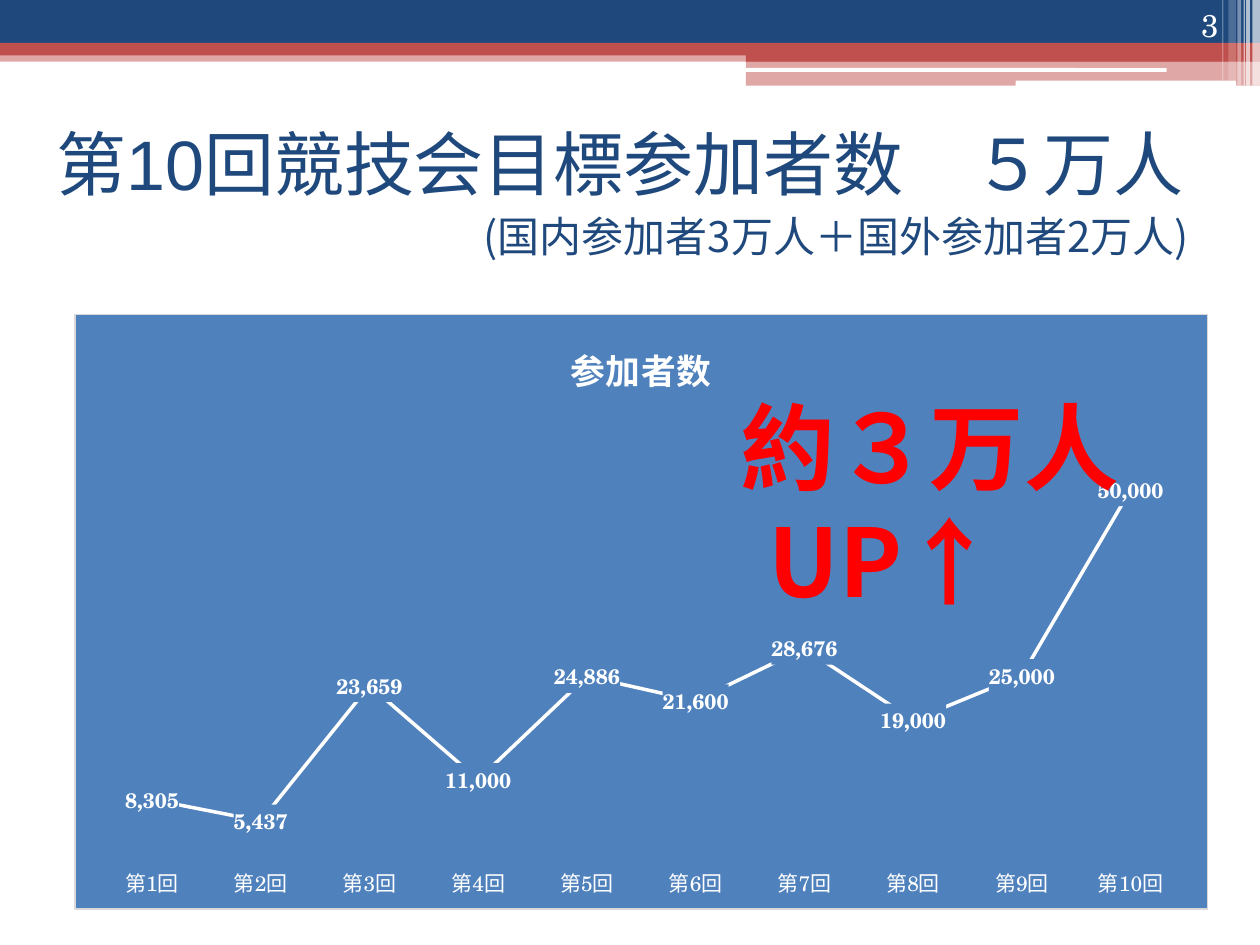
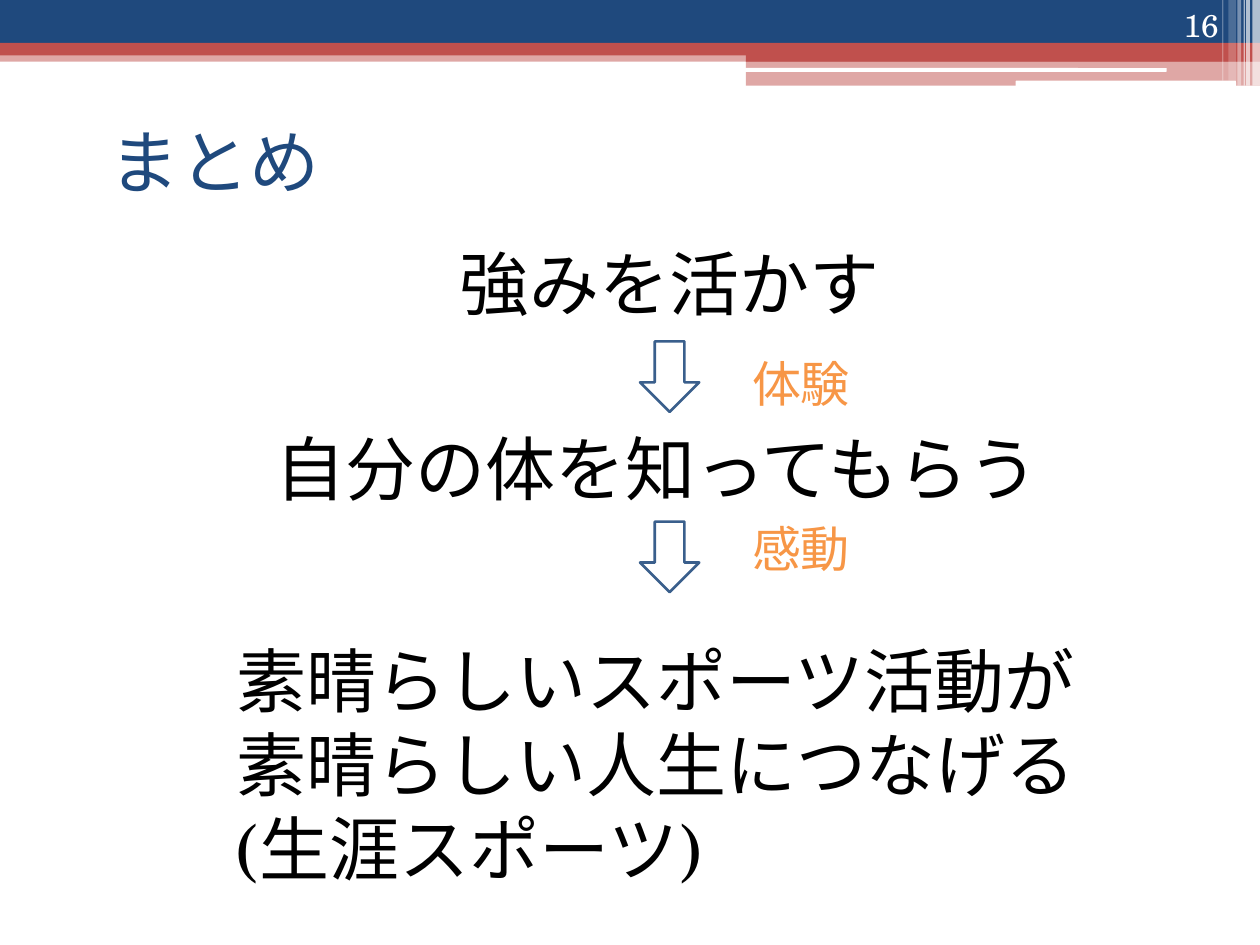
import pptx
import pptx.chart.data
import pptx.dml.color
import pptx.enum.chart
import pptx.enum.shapes
import pptx.enum.text
import pptx.oxml
import pptx.oxml.ns
import pptx.util

NAVY, RED, WHITE, BLACK = "1F497D", "C0504D", "FFFFFF", "000000"
BLUE, ARROW_EDGE, ORANGE = "4F81BD", "3A5F8C", "F79646"
SERIF, SANS = "TeX Gyre Schola", "Noto Sans CJK JP"
SHAPES = pptx.enum.shapes.MSO_SHAPE
ALIGN = pptx.enum.text.PP_ALIGN
ANCHOR = pptx.enum.text.MSO_ANCHOR
COLUMNS, ROWS = 100, 75

BANDS = [
    (0, 4, 100, 0.9, RED, 50),
    (0, 0, 100, 3.4, NAVY, 100),
    (0, 3.4, 100, 1, RED, 100),
    (59.2, 3.9, 40.8, 1, RED, 100),
    (59.2, 4.8, 40.8, 2, RED, 50),
]
GROOVES = [(59.1, 5.4, 33.5, 0.3), (80.6, 6.4, 17.5, 0.45)]
STRIPES = [
    (99.4, 0.6, 6.8, 65),
    (98.9, 0.3, 6.8, 65),
    (98.7, 0.1, 6.8, 60),
    (98.2, 0.3, 6.8, 40),
    (97.5, 0.6, 6.4, 20),
    (97, 0.1, 6.4, 30),
]
VISITORS = [8305, 5437, 23659, 11000, 24886, 21600, 28676, 19000, 25000, 50000]


def color(value):
    return pptx.dml.color.RGBColor.from_string(value)


def chart_xml(body):
    return pptx.oxml.parse_xml(
        body.replace(
            ">",
            ' xmlns:c="http://schemas.openxmlformats.org/drawingml/2006/chart"'
            ' xmlns:a="http://schemas.openxmlformats.org/drawingml/2006/main">',
            1,
        )
    )


def chart_fill(fill, line=""):
    return chart_xml(
        f'<c:spPr><a:solidFill><a:srgbClr val="{fill}"/></a:solidFill>{line}</c:spPr>'
    )


class Painter:
    def __init__(self):
        self.deck = pptx.Presentation()
        self.deck.slide_width = pptx.util.Inches(10)
        self.deck.slide_height = pptx.util.Inches(7.5)
        self.page = None

    def grid(self, left, top, width, height):
        column = self.deck.slide_width / COLUMNS
        row = self.deck.slide_height / ROWS
        return [
            pptx.util.Emu(round(length))
            for length in (left * column, top * row, width * column, height * row)
        ]

    def new_page(self, number):
        self.page = self.deck.slides.add_slide(self.deck.slide_layouts[6])
        for *place, fill, opacity in BANDS:
            self.shape(place, fill, opacity=opacity)
        for place in GROOVES:
            self.shape(place, WHITE, SHAPES.ROUNDED_RECTANGLE)
        for left, width, height, opacity in STRIPES:
            self.shape((left, 0, width, height), WHITE, opacity=opacity)
        self.text((89.4, 0, 8.3, 4), number, 18, WHITE,
                  align=ALIGN.RIGHT, anchor=ANCHOR.BOTTOM)

    def shape(self, place, fill, kind=SHAPES.RECTANGLE, opacity=100, edge=None):
        shape = self.page.shapes.add_shape(kind, *self.grid(*place))
        shape.shadow.inherit = False
        shape.fill.solid()
        shape.fill.fore_color.rgb = color(fill)
        if opacity < 100:
            tint = next(shape.element.iter(pptx.oxml.ns.qn("a:srgbClr")))
            alpha = tint.makeelement(pptx.oxml.ns.qn("a:alpha"), {"val": str(opacity * 1000)})
            tint.append(alpha)
        if edge:
            shape.line.color.rgb = color(edge)
            shape.line.width = pptx.util.Pt(1.5)
        else:
            shape.line.fill.background()

    def text(self, place, words, size, ink, font=SERIF, align=ALIGN.LEFT,
             anchor=ANCHOR.TOP, bold=False, inset=0.5, indent=0):
        box = self.page.shapes.add_textbox(*self.grid(*place))
        frame = box.text_frame
        frame.word_wrap = True
        frame.vertical_anchor = anchor
        frame.margin_top = self.grid(0, inset, 0, 0)[1]
        frame.text = words
        for para in frame.paragraphs:
            para.alignment = align
            if indent:
                first_line = self.grid(indent, 0, 0, 0)[0]
                para._p.get_or_add_pPr().set("indent", str(first_line))
            for span in para.runs:
                span.font.size = pptx.util.Pt(size)
                span.font.bold = bold
                span.font.name = font
                span.font.color.rgb = color(ink)
                latin = span.font._element.find(pptx.oxml.ns.qn("a:latin"))
                latin.addnext(latin.makeelement(pptx.oxml.ns.qn("a:ea"), {"typeface": SANS}))

    def chart_font(self, font, size, ink, bold=False):
        font.name = SERIF
        font.size = pptx.util.Pt(size)
        font.bold = bold
        font.color.rgb = color(ink)

    def line_chart(self, place, name, categories, values):
        data = pptx.chart.data.CategoryChartData(number_format="#,##0")
        data.categories = categories
        data.add_series(name, values)
        chart = self.page.shapes.add_chart(
            pptx.enum.chart.XL_CHART_TYPE.LINE, *self.grid(*place), data).chart
        self.chart_font(chart.font, 10, BLACK)
        chart.has_legend = False
        chart.has_title = True
        chart.chart_title.include_in_layout = False
        heading = chart.chart_title.text_frame
        heading.text = name
        self.chart_font(heading.paragraphs[0].runs[0].font, 19.9, WHITE, True)

        category_axis = chart.category_axis
        category_axis.major_tick_mark = pptx.enum.chart.XL_TICK_MARK.NONE
        category_axis.format.line.fill.background()
        self.chart_font(category_axis.tick_labels.font, 12, WHITE)
        value_axis = chart.value_axis
        value_axis.minimum_scale = 0
        value_axis.maximum_scale = 60000
        value_axis.has_major_gridlines = False
        value_axis.visible = False

        plot = chart.plots[0]
        plot.vary_by_categories = False
        series = plot.series[0]
        series.smooth = False
        series.marker.style = pptx.enum.chart.XL_MARKER_STYLE.NONE
        series.format.line.color.rgb = color(WHITE)
        series.format.line.width = pptx.util.Pt(2)
        labels = series.data_labels
        labels.show_value = True
        labels.number_format = "#,##0"
        labels.number_format_is_linked = False
        labels.position = pptx.enum.chart.XL_LABEL_POSITION.CENTER
        self.chart_font(labels.font, 12, WHITE, True)

        text_tag = pptx.oxml.ns.qn("c:txPr")
        labels._element.find(text_tag).addprevious(chart_fill(BLUE))
        border = '<a:ln w="9525"><a:solidFill><a:srgbClr val="D9D9D9"/></a:solidFill></a:ln>'
        chart.element.find(text_tag).addprevious(chart_fill(BLUE, border))
        area = next(chart.element.iter(pptx.oxml.ns.qn("c:plotArea")))
        for layout in area.findall(pptx.oxml.ns.qn("c:layout")):
            area.remove(layout)
        shares = {"x": 0.02, "y": 0.17, "w": 0.96, "h": 0.75}
        area.insert(0, chart_xml(
            '<c:layout><c:manualLayout><c:layoutTarget val="inner"/>'
            '<c:xMode val="edge"/><c:yMode val="edge"/>'
            + "".join(f'<c:{side} val="{share}"/>' for side, share in shares.items())
            + "</c:manualLayout></c:layout>"))


def target_page(painter):
    painter.new_page("3")
    painter.text((3.5, 7.6, 104.7, 17.3), "第10回競技会目標参加者数　５万人",
                 40, NAVY, "Arial", inset=2)
    painter.line_chart((5.9, 24.9, 90, 47.3), "参加者数",
                       [f"第{turn}回" for turn in range(1, len(VISITORS) + 1)], VISITORS)
    painter.text((42.9, 30.4, 54.3, 10.1), "約３万人UP↑", 54, "FF0000", SANS,
                 ALIGN.CENTER, bold=True, indent=7.5)
    painter.text((37.4, 16.2, 61.8, 5), "(国内参加者3万人＋国外参加者2万人)", 24, NAVY, SANS)


def summary_page(painter):
    painter.new_page("16")
    painter.text((7.7, 6.9, 24.8, 11.7), "まとめ", 40, NAVY, "Karla", anchor=ANCHOR.MIDDLE)
    painter.text((24.8, 18.6, 56.7, 7.7), "強みを活かす", 40, BLACK, align=ALIGN.CENTER)
    painter.text((20.1, 33.3, 64.1, 7.7), "自分の体を知ってもらう", 40, BLACK, align=ALIGN.CENTER)
    for arrow_top, label_top, label in ((27.1, 27.6, "体験"), (41.4, 40.7, "感動")):
        painter.shape((50.8, arrow_top, 4.7, 5.6), WHITE, SHAPES.DOWN_ARROW, edge=ARROW_EDGE)
        painter.text((58.7, label_top, 12.2, 5.7), label, 28, ORANGE)
    painter.text((17.8, 50.1, 79.9, 21.2),
                 "素晴らしいスポーツ活動が\n素晴らしい人生につなげる\n(生涯スポーツ)", 40, BLACK)


def main():
    painter = Painter()
    target_page(painter)
    summary_page(painter)
    painter.deck.save("out.pptx")


if __name__ == "__main__":
    main()
